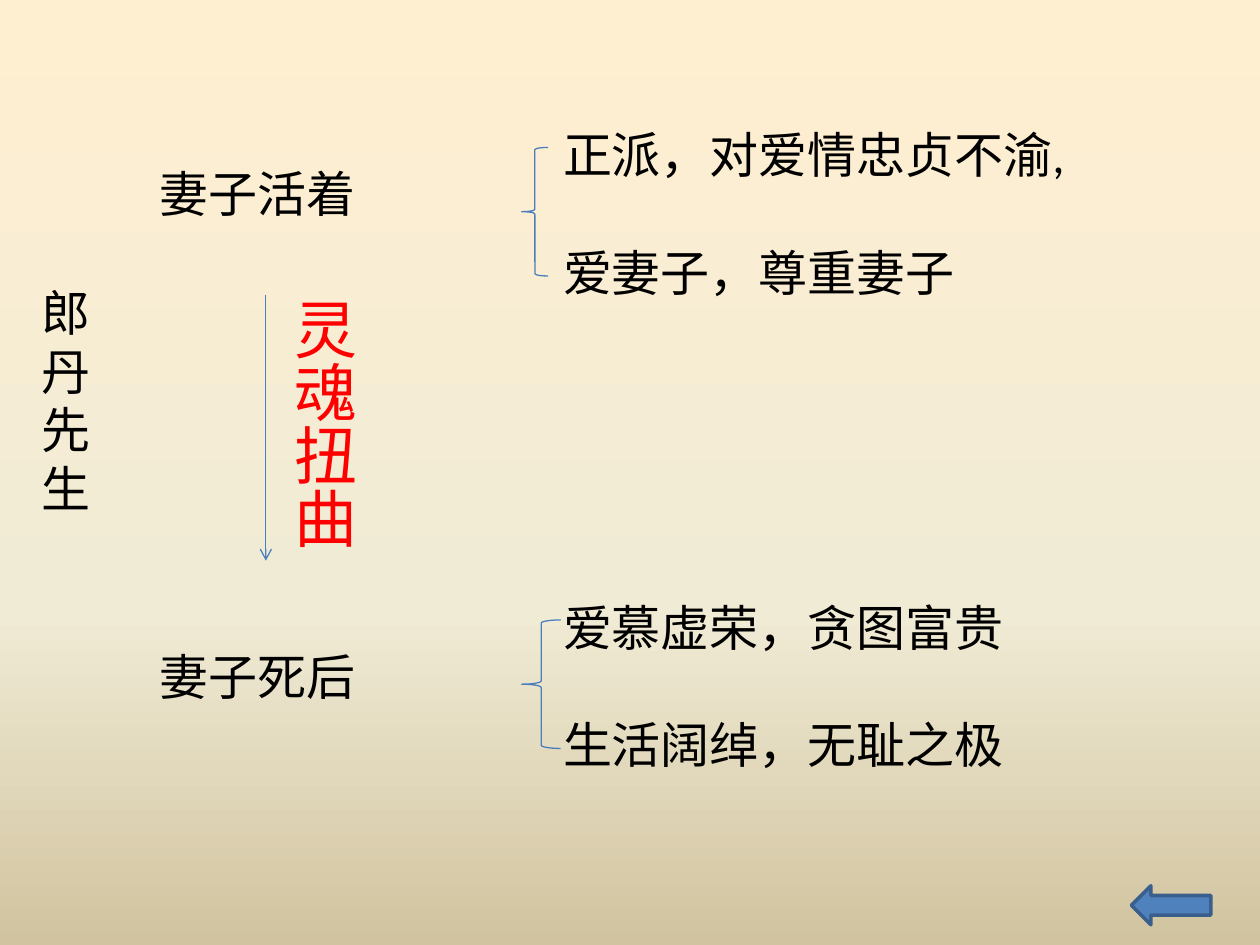
from copy import deepcopy
from dataclasses import dataclass

from pptx import Presentation
from pptx.dml.color import RGBColor
from pptx.enum.shapes import MSO_CONNECTOR, MSO_SHAPE
from pptx.enum.text import MSO_AUTO_SIZE
from pptx.oxml.ns import qn
from pptx.oxml.xmlchemy import OxmlElement
from pptx.util import Inches, Pt

STRAIGHT = MSO_CONNECTOR.STRAIGHT
LEFT_BRACE = MSO_SHAPE.LEFT_BRACE
LEFT_ARROW = MSO_SHAPE.LEFT_ARROW
FIT_SHAPE = MSO_AUTO_SIZE.SHAPE_TO_FIT_TEXT
BLANK_LAYOUT = 6


@dataclass(frozen=True)
class Theme:
    font: str = "Calibri"
    body_size: float = 28
    accent_size: float = 36
    paragraph_gap: float = 33.5
    thin_line: float = 0.75
    button_line: float = 2
    text: str = "000000"
    accent: str = "FF0000"
    line: str = "4B7EBC"
    button: str = "4F81BD"
    button_edge: str = "3A5F8C"
    background: tuple = ((0, "FFEFD1"), (0.65, "F0EBD5"), (1, "D1C39F"))


def color(value):
    return RGBColor.from_string(value)


def write_text(paragraph, text, *, font, size, fill):
    run = paragraph.add_run()
    run.text = text
    run.font.name = font
    run.font.size = Pt(size)
    run.font.color.rgb = color(fill)


class SlideBuilder:
    def __init__(self, slide, theme):
        self.slide = slide
        self.theme = theme

    def background(self):
        fill = self.slide.background.fill
        fill.gradient()
        fill.gradient_angle = 270  # top to bottom
        # The default gradient has two stops; add a third
        stop_list = self.slide.element.find(".//" + qn("a:gsLst"))
        stop_list.append(deepcopy(stop_list[-1]))
        for stop, (position, value) in zip(fill.gradient_stops, self.theme.background):
            stop.position = position
            stop.color.rgb = color(value)

    def text(self, lines, box, size=None, fill=None, vertical=False):
        shape = self.slide.shapes.add_textbox(*map(Inches, box))
        frame = shape.text_frame
        frame.word_wrap = True
        frame.auto_size = FIT_SHAPE
        if vertical:
            shape.element.txBody.find(qn("a:bodyPr")).set("vert", "eaVert")
        for index, line in enumerate(lines):
            paragraph = frame.add_paragraph() if index else frame.paragraphs[0]
            if index:
                paragraph.space_before = Pt(self.theme.paragraph_gap)
            write_text(paragraph, line, font=self.theme.font,
                       size=size or self.theme.body_size,
                       fill=fill or self.theme.text)

    def arrow(self, start, end):
        connector = self.slide.shapes.add_connector(
            STRAIGHT, *map(Inches, start + end))
        connector.line.color.rgb = color(self.theme.line)
        connector.line.width = Pt(self.theme.thin_line)
        head = OxmlElement("a:tailEnd")
        head.set("type", "arrow")
        connector.line._get_or_add_ln().append(head)
        connector.element.spPr.append(OxmlElement("a:effectLst"))

    def shape(self, kind, box, line, width, fill=None):
        shape = self.slide.shapes.add_shape(kind, *map(Inches, box))
        shape.shadow.inherit = False
        shape.line.color.rgb = color(line)
        shape.line.width = Pt(width)
        if fill:
            shape.fill.solid()
            shape.fill.fore_color.rgb = color(fill)
        else:
            shape.fill.background()

    def brace(self, box):
        self.shape(LEFT_BRACE, box, self.theme.line, self.theme.thin_line)

    def back_button(self, box):
        self.shape(LEFT_ARROW, box, self.theme.button_edge,
                   self.theme.button_line, self.theme.button)


def main():
    presentation = Presentation()
    presentation.slide_width = Inches(10)
    presentation.slide_height = Inches(7.5)
    slide = presentation.slides.add_slide(presentation.slide_layouts[BLANK_LAYOUT])
    theme = Theme()
    builder = SlideBuilder(slide, theme)
    builder.background()

    # Character name, one sign per line
    builder.text(["郎丹先生"], (0.23, 2.19, 0.63, 1.99))

    # Traits before and after
    builder.text(["正派，对爱情忠贞不渝,", "爱妻子，尊重妻子"], (4.37, 0.94, 4.38, 1.51))
    builder.text(["爱慕虚荣，贪图富贵", "生活阔绰，无耻之极"], (4.37, 4.69, 4.92, 1.51))

    # The two stages
    builder.text(["妻子活着"], (1.17, 1.25, 3.13, 0.57))
    builder.text(["妻子死后"], (1.17, 5.08, 2.42, 0.57))

    # The change between the stages
    builder.text(["灵魂扭曲"], (2.11, 2.27, 0.81, 2.58),
                 size=theme.accent_size, fill=theme.accent, vertical=True)
    builder.arrow((2.11, 2.34), (2.11, 4.45))

    # Braces and back button
    builder.brace((4.14, 4.92, 0.31, 1.02))
    builder.brace((4.14, 1.17, 0.21, 1.02))
    builder.back_button((8.98, 7.03, 0.63, 0.31))

    presentation.save("out.pptx")


if __name__ == "__main__":
    main()
